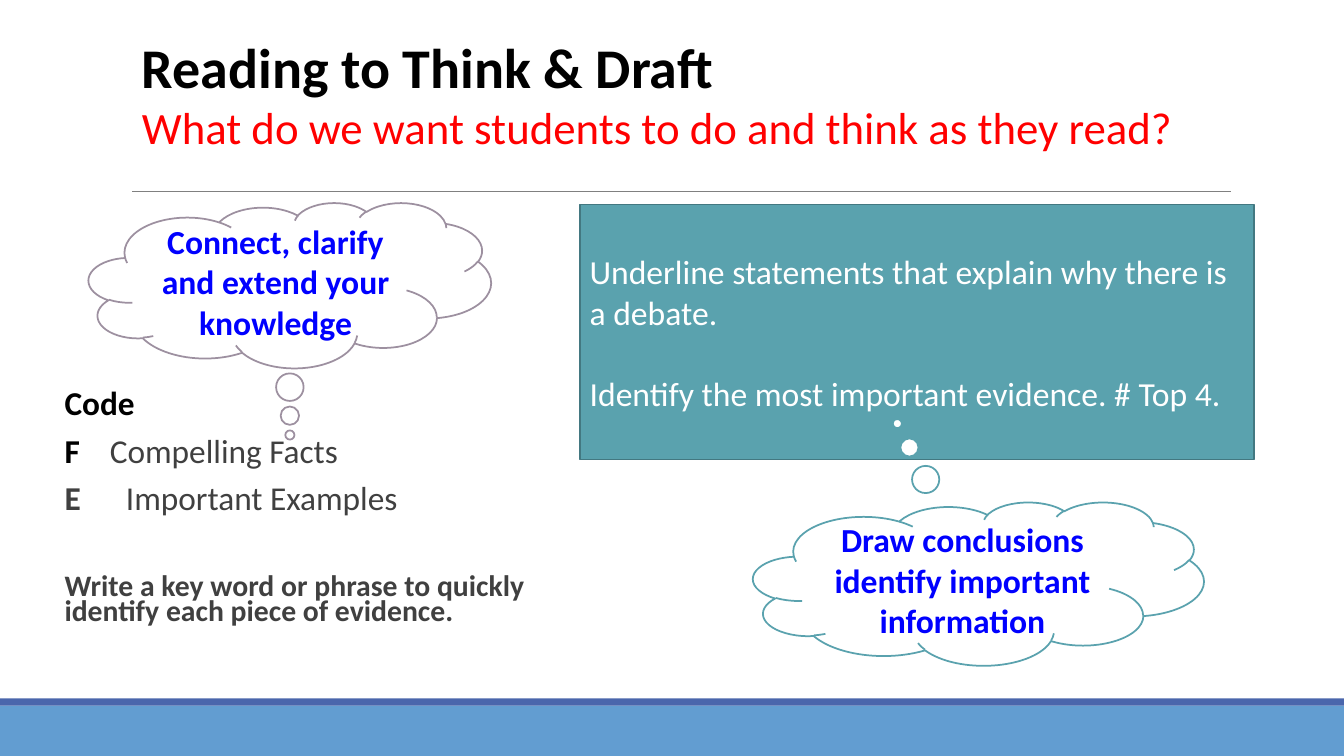
from lxml import etree
from pptx import Presentation
from pptx.dml.color import RGBColor
from pptx.enum.shapes import MSO_CONNECTOR, MSO_SHAPE
from pptx.enum.text import MSO_ANCHOR, PP_ALIGN
from pptx.oxml.ns import qn
from pptx.util import Inches, Pt

RECTANGLE, CLOUD = MSO_SHAPE.RECTANGLE, MSO_SHAPE.CLOUD_CALLOUT
STRAIGHT = MSO_CONNECTOR.STRAIGHT
TOP, MIDDLE = MSO_ANCHOR.TOP, MSO_ANCHOR.MIDDLE
LEFT, CENTER = PP_ALIGN.LEFT, PP_ALIGN.CENTER

BLACK = RGBColor(0x00, 0x00, 0x00)
WHITE = RGBColor(0xFF, 0xFF, 0xFF)
RED = RGBColor(0xFF, 0x00, 0x00)
BLUE = RGBColor(0x00, 0x00, 0xFF)
DARK_GRAY = RGBColor(0x40, 0x40, 0x40)
RULE_GRAY = RGBColor(0x80, 0x80, 0x80)
MAUVE = RGBColor(0x9D, 0x90, 0xA0)
TEAL = RGBColor(0x5A, 0xA2, 0xAE)
DARK_TEAL = RGBColor(0x43, 0x78, 0x81)
FOOTER_BLUE = RGBColor(0x62, 0x9D, 0xD1)
FOOTER_STRIPE = RGBColor(0x4A, 0x66, 0xAC)

FONT = "Calibri"
SLIDE_WIDTH, SLIDE_HEIGHT = 13.33, 7.5
CODE_SIZE = 23.8


def set_format(target, values):
    for name, value in values.items():
        setattr(target, name, value)


def add_run(paragraph, text, size, color, bold=False):
    run = paragraph.add_run()
    run.text = text
    set_format(run.font, {"name": FONT, "size": Pt(size), "bold": bold})
    run.font.color.rgb = color


def add_paragraph(frame, runs, **values):
    """Fill the first paragraph if it is still empty, otherwise append one."""
    paragraph = frame.paragraphs[0]
    if paragraph.runs:
        paragraph = frame.add_paragraph()
    set_format(paragraph, values)
    for run in runs:
        add_run(paragraph, *run)
    return paragraph


def add_tab_stop(paragraph, position):
    properties = paragraph._p.get_or_add_pPr()
    tab_list = etree.SubElement(properties, qn("a:tabLst"))
    etree.SubElement(tab_list, qn("a:tab"), pos=str(Inches(position)), algn="l")


def add_text_box(slide, box):
    frame = slide.shapes.add_textbox(*map(Inches, box)).text_frame
    set_format(frame, {"word_wrap": True, "vertical_anchor": TOP})
    return frame


def add_filled_shape(slide, kind, box, fill, line=None):
    shape = slide.shapes.add_shape(kind, *map(Inches, box))
    shape.shadow.inherit = False
    shape.fill.solid()
    shape.fill.fore_color.rgb = fill
    if line is None:
        shape.line.fill.background()
    else:
        shape.line.color.rgb = line
        shape.line.width = Pt(1.25)
    set_format(shape.text_frame, {"word_wrap": True, "vertical_anchor": MIDDLE})
    return shape


def add_footer(slide, box):
    left, top, width, height = box
    stripe = 0.07
    add_filled_shape(slide, RECTANGLE, (left, top + stripe, width, height - stripe), FOOTER_BLUE)
    add_filled_shape(slide, RECTANGLE, (left, top, width, stripe), FOOTER_STRIPE)


def add_title(slide, box):
    """Place the two-line title and the rule below it."""
    left, top, width, height = box
    rule_y = top + height + 0.32
    rule = slide.shapes.add_connector(
        STRAIGHT, *map(Inches, (left, rule_y, left + 10.9, rule_y)))
    rule.line.color.rgb = RULE_GRAY
    rule.line.width = Pt(0.5)
    etree.SubElement(rule._element.spPr, qn("a:effectLst"))

    frame = add_text_box(slide, box)
    add_paragraph(frame, [("Reading to Think & Draft", 40, BLACK, True)])
    add_paragraph(frame, [("What do we want students to do and think as they read?", 32, RED)])


def add_code_list(slide, box):
    frame = add_text_box(slide, box)
    set_format(frame, {"margin_left": 0, "margin_right": 0})
    spacing = {"line_spacing": 0.7, "space_before": Pt(12), "space_after": Pt(2)}
    add_paragraph(frame, [("Code", CODE_SIZE, BLACK, True)], **spacing)
    for letter, color, meaning, tab in (
        ("F", BLACK, "Compelling Facts", 0.45),
        ("E", DARK_GRAY, "Important Examples", 0.61),
    ):
        paragraph = add_paragraph(
            frame,
            [(letter, CODE_SIZE, color, True), ("\t" + meaning, CODE_SIZE, DARK_GRAY)],
            **spacing)
        add_tab_stop(paragraph, tab)
    instruction = "Write a key word or phrase to quickly identify each piece of evidence."
    add_paragraph(frame, [(instruction, 21.2, DARK_GRAY, True)],
                  **{**spacing, "space_before": Pt(41)})


def add_task_panel(slide, box):
    frame = add_filled_shape(slide, RECTANGLE, box, TEAL, DARK_TEAL).text_frame
    tasks = ("Underline statements that explain why there is a debate.",
             "Identify the most important evidence. # Top 4.")
    for task, gap in zip(tasks, (0, 29.3)):
        add_paragraph(frame, [(task, 24, WHITE)], alignment=LEFT, space_before=Pt(gap))


def add_thought_cloud(slide, box, text, line, tail):
    cloud = add_filled_shape(slide, CLOUD, box, WHITE, line)
    for index, offset in enumerate(tail):
        cloud.adjustments[index] = offset
    add_paragraph(cloud.text_frame, [(text, 24, BLUE, True)], alignment=CENTER)


def build_reading_slide(presentation):
    slide = presentation.slides.add_slide(presentation.slide_layouts[6])
    add_footer(slide, (0, 6.93, SLIDE_WIDTH, 0.57))
    add_title(slide, (1.31, 0.27, 11, 1.31))
    add_code_list(slide, (0.64, 3.85, 4.64, 3.49))
    add_thought_cloud(slide, (0.88, 2.01, 3.99, 1.64),
                      "Connect, clarify and extend your knowledge", MAUVE, (0, 0.906))
    add_task_panel(slide, (5.75, 2.03, 6.69, 2.53))
    add_thought_cloud(slide, (7.47, 4.98, 4.47, 1.62),
                      "Draw conclusions identify important information", TEAL, (-0.18, -0.98))


def main():
    presentation = Presentation()
    presentation.slide_width = Inches(SLIDE_WIDTH)
    presentation.slide_height = Inches(SLIDE_HEIGHT)
    build_reading_slide(presentation)
    presentation.save("out.pptx")


if __name__ == "__main__":
    main()
